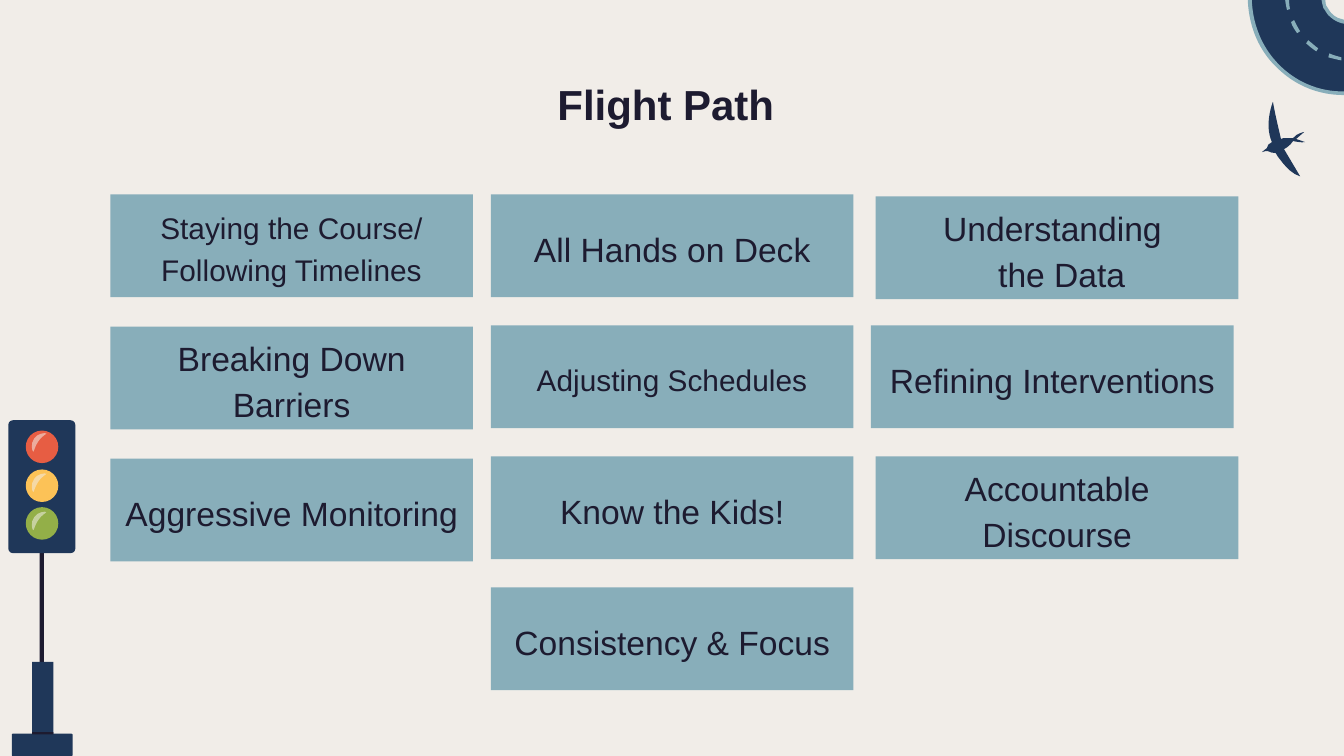
from typing import NamedTuple

from lxml.etree import Element, SubElement
from pptx import Presentation
from pptx.dml.color import RGBColor
from pptx.enum.shapes import MSO_SHAPE
from pptx.enum.text import MSO_ANCHOR, PP_ALIGN
from pptx.oxml.ns import qn
from pptx.util import Cm, Pt

COLORS = {
    "cream": "F1EDE8",
    "navy": "1F3759",
    "teal": "88AEBA",
    "ink": "1D1B30",
    "red": "E75D43",
    "amber": "FCC257",
    "green": "93AF48",
}
FONT = "Arial"
OUTLINE_UNIT = Cm(0.0254)  # outlines are drawn on a grid of 1/100 inch

TILE_WIDTH, TILE_HEIGHT = 9.14, 2.59
COLUMN_LEFTS = (2.78, 12.37, 22.07)
FIRST_ROW_TOP, ROW_STEP = 4.9, 3.3


class Tile(NamedTuple):
    column: int
    row: int
    lines: tuple[str, ...]
    size: float = 24
    dx: float = 0
    dy: float = 0


class Block(NamedTuple):
    left: float
    top: float
    width: float
    height: float
    color: str
    kind: MSO_SHAPE = MSO_SHAPE.RECTANGLE
    corner: float = 0


class Lamp(NamedTuple):
    top: float
    color: str
    glint_drop: int


class Loop(NamedTuple):
    """A start point, then lines (2 numbers) and cubic curves (6 numbers)."""
    start: tuple[int, int]
    segments: tuple[tuple[int, ...], ...]


class Outline(NamedTuple):
    color: str
    loops: tuple[Loop, ...]


TILES = [
    Tile(0, 0, ("Staying the Course/ Following Timelines",), size=21.33),
    Tile(1, 0, ("All Hands on Deck",)),
    Tile(2, 0, ("Understanding ", " the Data"), dy=0.05),
    Tile(0, 1, ("Breaking Down Barriers",), dy=0.03),
    Tile(1, 1, ("Adjusting Schedules",), size=21.33),
    Tile(2, 1, ("Refining Interventions",), dx=-0.12),
    Tile(0, 2, ("Aggressive Monitoring ",), dy=0.06),
    Tile(1, 2, ("Know the Kids!",)),
    Tile(2, 2, ("Accountable Discourse",)),
    Tile(1, 3, ("Consistency & Focus",)),
]

ROAD_SURFACE = Outline("navy", (Loop((1240, -4), (
    (1284, -4), (1313, -3), (1313, -1, 1313, 3, 1315, 7),
    (1316, 9, 1318, 12, 1321, 16), (1329, 22, 1337, 22, 1340, 22),
    (1340, 46, 1340, 69, 1341, 92), (1333, 93, 1319, 93, 1305, 88),
    (1294, 84, 1282, 79, 1271, 68), (1241, 41, 1240, 6, 1240, -4))),))

OUTER_EDGE = Outline("teal", (Loop((1341, 94), (
    (1328, 95, 1297, 95, 1269, 69), (1239, 42, 1238, 6, 1238, -4),
    (1242, -4), (1242, 6, 1243, 40, 1272, 67),
    (1298, 91, 1328, 92, 1341, 90))),))

INNER_EDGE = Outline("teal", (Loop((1340, 24), (
    (1336, 24, 1328, 24, 1320, 17), (1316, 14, 1315, 10, 1313, 8),
    (1312, 4, 1311, 1, 1311, -3), (1315, -3),
    (1315, 0, 1315, 4, 1316, 6), (1318, 8, 1319, 12, 1323, 15),
    (1329, 20, 1337, 20, 1340, 20))),))

LANE_DASHES = Outline("teal", (
    Loop((1331, 57), ((1331, 60), (1326, 59, 1322, 58, 1318, 57),
                      (1319, 53), (1323, 55, 1328, 56, 1331, 57))),
    Loop((1308, 48), ((1306, 51), (1303, 49, 1299, 46, 1296, 43),
                      (1298, 40), (1302, 43, 1305, 46, 1308, 48))),
    Loop((1290, 31), ((1287, 33), (1285, 30, 1282, 26, 1281, 22),
                      (1284, 20), (1286, 24, 1288, 28, 1290, 31))),
    Loop((1280, 9), ((1277, 10), (1276, 6, 1275, 1, 1275, -3),
                     (1279, -4), (1279, 1, 1279, 5, 1280, 9))),
))

BIRD = Outline("navy", (Loop((1294, 131), (
    (1294, 131, 1287, 132, 1283, 137), (1281, 137, 1279, 137, 1277, 137),
    (1274, 137, 1272, 137, 1271, 138), (1268, 125, 1265, 113, 1263, 101),
    (1263, 101, 1254, 123, 1262, 141), (1259, 142, 1257, 145, 1257, 147),
    (1256, 148, 1254, 149, 1252, 151), (1254, 150, 1256, 150, 1258, 150),
    (1260, 151, 1263, 152, 1266, 152), (1267, 155, 1270, 158, 1273, 162),
    (1277, 167, 1283, 173, 1290, 175), (1274, 148),
    (1274, 148, 1280, 145, 1283, 140), (1283, 140, 1292, 142, 1295, 141),
    (1286, 138))),))

GLINT = Outline("cream", (Loop((34, 435), (
    (30, 440, 32, 448, 33, 448), (34, 448, 34, 444, 38, 438),
    (42, 432, 46, 431, 46, 430), (45, 429, 37, 430, 34, 435))),))

TRAFFIC_LIGHT = [
    Block(1.0, 12.78, 0.11, 5.76, "ink"),
    Block(0.81, 16.68, 0.54, 1.86, "navy"),
    Block(0.3, 18.49, 1.53, 0.56, "navy", MSO_SHAPE.ROUNDED_RECTANGLE, 0.04),
    Block(0.21, 10.59, 1.69, 3.35, "navy", MSO_SHAPE.ROUNDED_RECTANGLE, 0.07),
]
STAND_SEAM = Block(0.81, 18.45, 0.54, 0.06, "ink")
LAMP_LEFT, LAMP_SIZE = 0.65, 0.82
LAMPS = [
    Lamp(10.85, "red", 0),
    Lamp(11.83, "amber", 40),
    Lamp(12.78, "green", 78),
]


def rgb(color: str) -> RGBColor:
    return RGBColor.from_string(COLORS[color])


def paint(shape, color: str, opacity: int = 100) -> None:
    shape.shadow.inherit = False
    shape.fill.solid()
    shape.fill.fore_color.rgb = rgb(color)
    shape.line.fill.background()
    if opacity < 100:
        color_node = next(shape._element.spPr.iter(qn("a:srgbClr")))
        SubElement(color_node, qn("a:alpha"), val=str(opacity * 1000))


def draw_block(shapes, block: Block):
    shape = shapes.add_shape(block.kind, Cm(block.left), Cm(block.top),
                             Cm(block.width), Cm(block.height))
    if block.corner:
        shape.adjustments[0] = block.corner
    paint(shape, block.color)
    return shape


def bend_curves(shape, loops: tuple[Loop, ...]) -> None:
    """Join the three line steps of each cubic segment into one curve."""
    steps = iter(list(shape._element.iter(qn("a:lnTo"))))
    for loop in loops:
        for segment in loop.segments:
            parts = [next(steps) for _ in range(len(segment) // 2)]
            if len(parts) == 3:
                curve = Element(qn("a:cubicBezTo"))
                parts[0].addprevious(curve)
                for part in parts:
                    curve.append(part[0])
                    part.getparent().remove(part)


def draw_outline(shapes, outline: Outline, drop: int = 0, opacity: int = 100) -> None:
    def place(x: int, y: int) -> tuple[int, int]:
        return x * OUTLINE_UNIT, (y + drop) * OUTLINE_UNIT

    builder = None
    for loop in outline.loops:
        if builder is None:
            builder = shapes.build_freeform(*place(*loop.start), scale=1.0)
        else:
            builder.move_to(*place(*loop.start))
        builder.add_line_segments(
            [place(*segment[i:i + 2]) for segment in loop.segments
             for i in range(0, len(segment), 2)], close=True)
    shape = builder.convert_to_shape()
    bend_curves(shape, outline.loops)
    paint(shape, outline.color, opacity)


def write(shape, lines: tuple[str, ...], size: float, anchor: MSO_ANCHOR,
          bold: bool = False, spacing: float = 1.0) -> None:
    frame = shape.text_frame
    frame.word_wrap = True
    frame.vertical_anchor = anchor
    frame.margin_left = frame.margin_right = Cm(0.34)
    frame.margin_top = frame.margin_bottom = Cm(0.34)
    frame.text = "\n".join(lines)
    for paragraph in frame.paragraphs:
        paragraph.alignment = PP_ALIGN.CENTER
        paragraph.line_spacing = spacing
        paragraph.font.name = FONT
        paragraph.font.size = Pt(size)
        paragraph.font.bold = bold
        paragraph.font.color.rgb = rgb("ink")


def draw_tile(shapes, tile: Tile) -> None:
    left = COLUMN_LEFTS[tile.column] + tile.dx
    top = FIRST_ROW_TOP + tile.row * ROW_STEP + tile.dy
    shape = draw_block(shapes, Block(left, top, TILE_WIDTH, TILE_HEIGHT, "teal"))
    write(shape, tile.lines, tile.size, MSO_ANCHOR.MIDDLE, spacing=1.15)


def main() -> None:
    presentation = Presentation()
    presentation.slide_width, presentation.slide_height = Cm(33.87), Cm(19.05)
    slide = presentation.slides.add_slide(presentation.slide_layouts[6])
    slide.background.fill.solid()
    slide.background.fill.fore_color.rgb = rgb("cream")
    shapes = slide.shapes

    # Road and bird
    for outline in (ROAD_SURFACE, OUTER_EDGE, INNER_EDGE, LANE_DASHES, BIRD):
        draw_outline(shapes, outline)

    # Traffic light
    for block in TRAFFIC_LIGHT:
        draw_block(shapes, block)
    for lamp in LAMPS:
        draw_block(shapes, Block(LAMP_LEFT, lamp.top, LAMP_SIZE, LAMP_SIZE,
                                 lamp.color, MSO_SHAPE.OVAL))
        draw_outline(shapes, GLINT, lamp.glint_drop, opacity=55)
    draw_block(shapes, STAND_SEAM)

    # Title
    title = shapes.add_textbox(Cm(2.67), Cm(1.65), Cm(28.52), Cm(2.13))
    write(title, ("Flight Path ",), 30, MSO_ANCHOR.TOP, bold=True)

    # Tiles
    for tile in TILES:
        draw_tile(shapes, tile)

    presentation.save("out.pptx")


if __name__ == "__main__":
    main()
